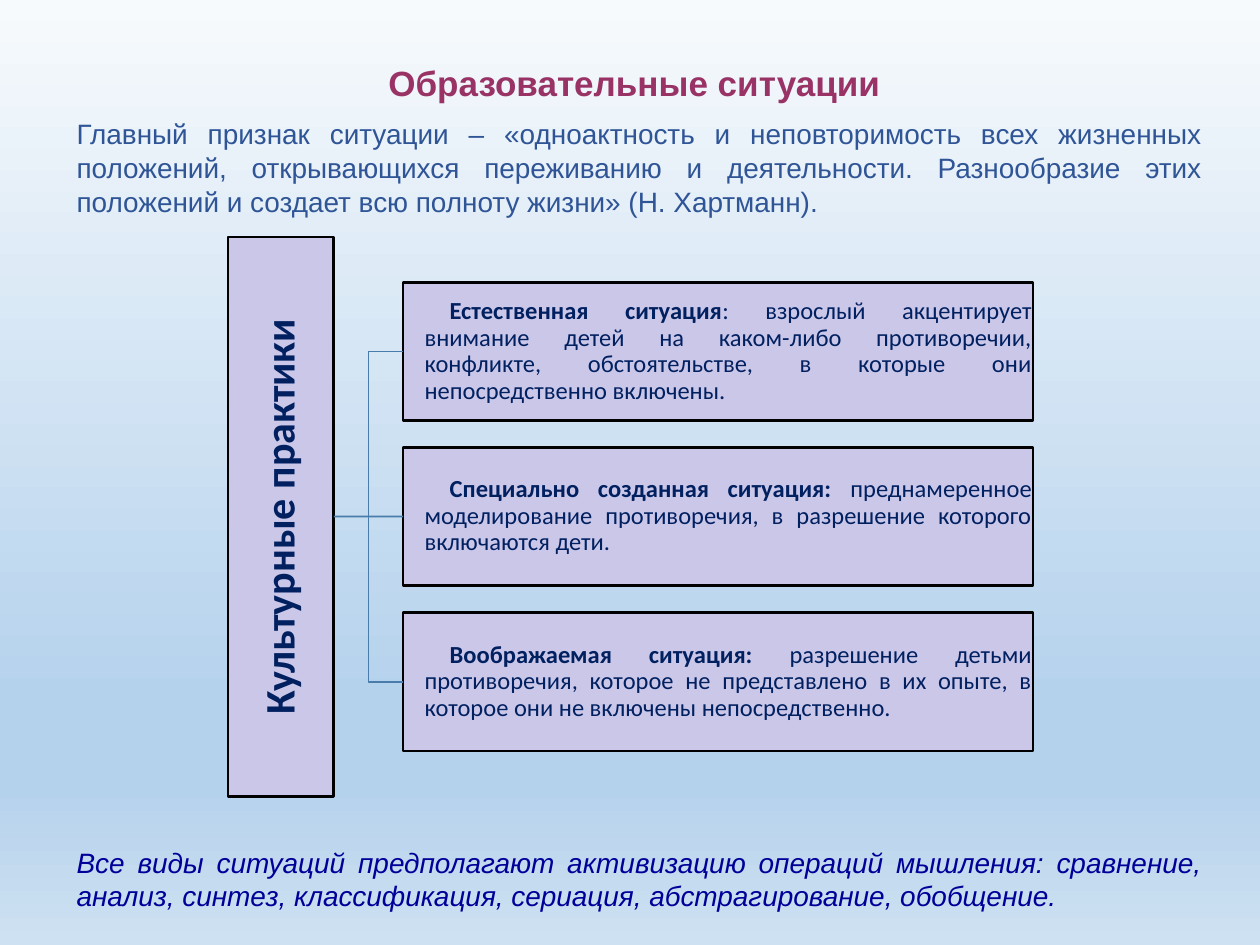
from copy import deepcopy
from lxml.etree import SubElement
from pptx import Presentation
from pptx.dml.color import RGBColor
from pptx.enum.shapes import MSO_CONNECTOR as CONN, MSO_SHAPE as SHAPE
from pptx.enum.text import MSO_ANCHOR as ANCHOR, PP_ALIGN as ALIGN
from pptx.oxml.ns import qn
from pptx.util import Inches, Pt

W, H = 10, 7.5
BACKDROP = [(0, "F7FAFD"), (0.74, "B5D2EC"), (0.83, "B5D2EC"), (1, "CEE1F2")]
FILL, EDGE, LINK, NAVY = "CBC7E9", "000000", "497CAB", "002060"

TEXTS = [
    ((1.02, 0.44, 8.03, 0.44), "Образовательные ситуации", ALIGN.CENTER,
     dict(size=20, color="993366", bold=True)),
    ((0.51, 0.88, 9.13, 0.9),
     "Главный признак ситуации – «одноактность и неповторимость всех жизненных положений, "
     "открывающихся переживанию и деятельности. Разнообразие этих положений и создает всю "
     "полноту жизни» (Н. Хартманн).", ALIGN.JUSTIFY, dict(size=16, color="2F5597")),
    ((0.51, 6.66, 9.13, 0.64),
     "Все виды ситуаций предполагают активизацию операций мышления: сравнение, анализ, "
     "синтез, классификация, сериация, абстрагирование, обобщение.", ALIGN.JUSTIFY,
     dict(size=16, color="000099", italic=True)),
]
ROOT = "Культурные практики"
SITUATIONS = [
    ("Естественная ситуация", ": взрослый акцентирует внимание детей на каком-либо противоречии, "
     "конфликте, обстоятельстве, в которые они непосредственно включены."),
    ("Специально созданная ситуация: ", "преднамеренное моделирование противоречия, "
     "в разрешение которого включаются дети."),
    ("Воображаемая ситуация:", " разрешение детьми противоречия, которое не представлено "
     "в их опыте, в которое они не включены непосредственно."),
]
ROOT_X, ROOT_W, ROOT_H = 1.81, 0.84, 4.44
BOX_X, BOX_W, BOX_H, PITCH, MIDDLE = 3.2, 5, 1.1, 1.31, 4.1


def rgb(value):
    """Turn a hex string into a colour."""
    return RGBColor.from_string(value)


def add_run(p, text, font="Arial", size=14, color=NAVY, **style):
    """Add one formatted run to a paragraph."""
    r = p.add_run()
    r.text = text
    r.font.color.rgb = rgb(color)
    for key, value in dict(name=font, size=Pt(size), **style).items():
        setattr(r.font, key, value)


def add_text(slide, place, text, align, style):
    """Add a wrapped text box holding one paragraph."""
    tf = slide.shapes.add_textbox(*map(Inches, place)).text_frame
    tf.word_wrap = True
    p = tf.paragraphs[0]
    p.alignment = align
    add_run(p, text, **style)


def add_box(slide, left, width, height, center, inset, align):
    """Add a framed box centred on a height and return it with its paragraph."""
    place = left, center - height / 2, width, height
    sp = slide.shapes.add_shape(SHAPE.RECTANGLE, *map(Inches, place))
    sp.shadow.inherit = False
    sp.fill.solid()
    sp.fill.fore_color.rgb = rgb(FILL)
    sp.line.color.rgb = rgb(EDGE)
    sp.line.width = Pt(1.5)
    tf = sp.text_frame
    tf.word_wrap = True
    tf.vertical_anchor = ANCHOR.MIDDLE
    for side in ("left", "top", "right", "bottom"):
        setattr(tf, f"margin_{side}", Inches(inset))
    p = tf.paragraphs[0]
    p.alignment = align
    p.line_spacing = 0.9
    return sp, p


def link(slide, root, box, kind):
    """Join the right side of the root to the left side of a box."""
    c = slide.shapes.add_connector(kind, 0, 0, 0, 0)
    c.begin_connect(root, 3)
    c.end_connect(box, 1)
    c.line.color.rgb = rgb(LINK)
    c.line.width = Pt(1)
    SubElement(c._element.spPr, qn("a:effectLst"))


def paint_background(slide):
    """Fill the slide with the vertical gradient."""
    fill = slide.background.fill
    fill.gradient()
    fill.gradient_angle = 270
    stops = slide._element.find(".//" + qn("a:gsLst"))
    while len(stops) < len(BACKDROP):
        stops.append(deepcopy(stops[0]))
    for stop, (position, color) in zip(fill.gradient_stops, BACKDROP):
        stop.position = position
        stop.color.rgb = rgb(color)


def main():
    """Build the slide and save it."""
    prs = Presentation()
    prs.slide_width, prs.slide_height = Inches(W), Inches(H)
    slide = prs.slides.add_slide(prs.slide_layouts[6])
    paint_background(slide)
    for item in TEXTS:
        add_text(slide, *item)

    root, p = add_box(slide, ROOT_X, ROOT_W, ROOT_H, MIDDLE, 0.02, ALIGN.CENTER)
    root.text_frame._txBody.bodyPr.set("vert", "vert270")
    add_run(p, ROOT, "Calibri", 24, bold=True)

    for i, (name, about) in enumerate(SITUATIONS):
        row = i - (len(SITUATIONS) - 1) / 2
        box, p = add_box(slide, BOX_X, BOX_W, BOX_H, MIDDLE + row * PITCH, 0.01, ALIGN.JUSTIFY)
        for key, value in dict(marL=0.16, indent=0.2).items():
            p._p.get_or_add_pPr().set(key, str(Inches(value)))
        add_run(p, name, "Calibri", bold=True)
        add_run(p, about, "Calibri", bold=False)
        link(slide, root, box, CONN.ELBOW if row else CONN.STRAIGHT)
    prs.save("out.pptx")


if __name__ == "__main__":
    main()
